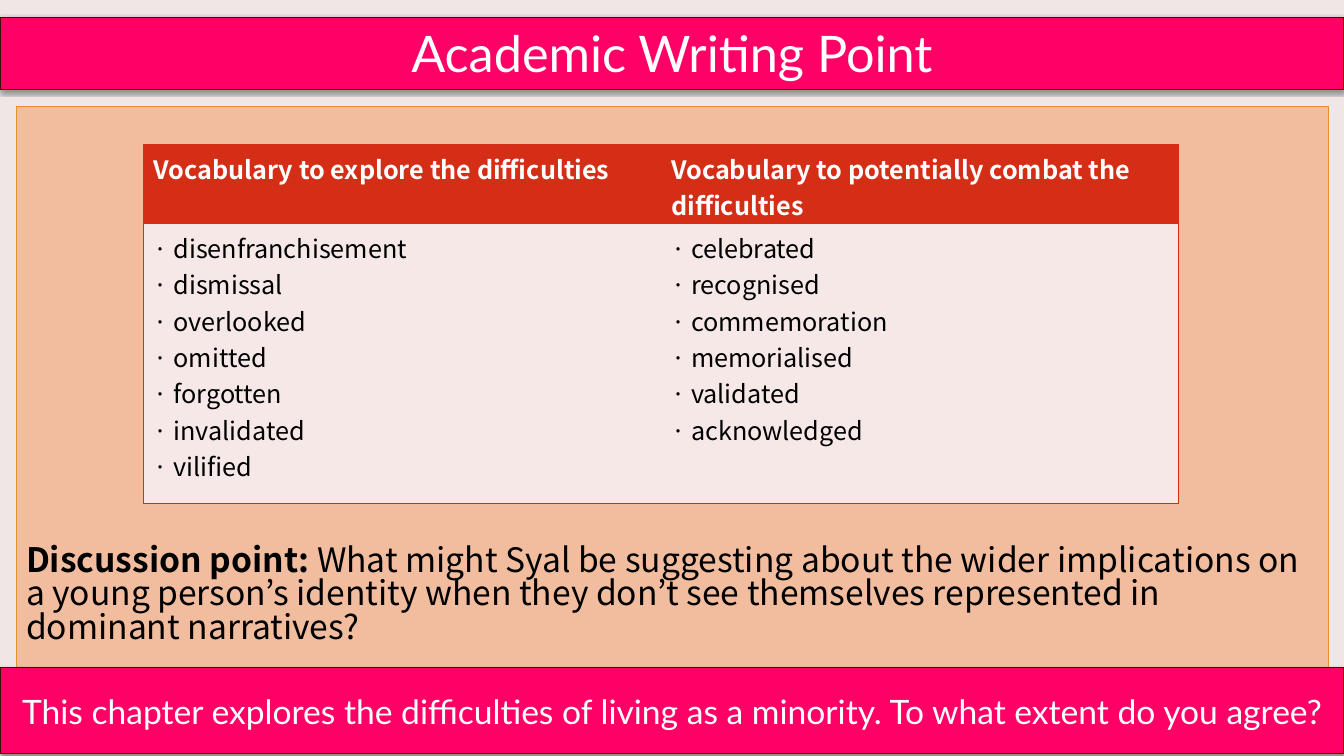
from dataclasses import dataclass

import pptx
import pptx.dml.color
import pptx.enum.shapes
import pptx.enum.text
import pptx.oxml
import pptx.oxml.ns
import pptx.util

Pt = pptx.util.Pt
ALIGN = pptx.enum.text.PP_ALIGN
ANCHOR = pptx.enum.text.MSO_ANCHOR


@dataclass(frozen=True)
class Theme:
    background: str = "F0E6E5"
    banner: str = "FF0066"
    banner_edge: str = "3C1301"
    panel: str = "F1BD9E"
    panel_edge: str = "E78F29"
    table_red: str = "D52E17"
    table_body: str = "F7E8E8"
    light: str = "FFFFFF"
    dark: str = "000000"
    banner_font: str = "Lato"
    body_font: str = "Noto Sans CJK JP"
    title_size: float = 36
    discussion_size: float = 24
    table_size: float = 18


@dataclass(frozen=True)
class Box:
    left: float
    top: float
    width: float
    height: float
    fill: str
    edge: str
    shadow: bool = False


@dataclass(frozen=True)
class Vocabulary:
    heading: str
    words: tuple[str, ...]


THEME = Theme()
SLIDE_WIDTH, SLIDE_HEIGHT = 960, 540
TITLE = Box(0, 12.24, SLIDE_WIDTH, 51.84, THEME.banner, THEME.banner_edge, True)
PANEL = Box(11.5, 76.3, 937.4, 411.1, THEME.panel, THEME.panel_edge)
QUESTION = Box(0, 476.64, SLIDE_WIDTH, 61.92, THEME.banner, THEME.banner_edge, True)
TABLE_LEFT, TABLE_TOP = 102.6, 103.5
COLUMN_WIDTH = 369.7
ROW_HEIGHTS = (56.4, 200)
VOCABULARIES = (
    Vocabulary(
        "Vocabulary to explore the difficulties",
        ("disenfranchisement", "dismissal", "overlooked", "omitted",
         "forgotten", "invalidated", "vilified"),
    ),
    Vocabulary(
        "Vocabulary to potentially combat the difficulties",
        ("celebrated", "recognised", "commemoration", "memorialised",
         "validated", "acknowledged"),
    ),
)


def rgb(colour: str) -> pptx.dml.color.RGBColor:
    return pptx.dml.color.RGBColor.from_string(colour)


def add_text(paragraph, text: str, *, font: str, size: float, colour: str,
             bold: bool = False) -> None:
    run = paragraph.add_run()
    run.text = text
    run.font.name = font
    run.font.size = Pt(size)
    run.font.bold = bold
    run.font.color.rgb = rgb(colour)


def add_shadow(shape) -> None:
    effects = shape.element.spPr.find(pptx.oxml.ns.qn("a:effectLst"))
    effects.append(pptx.oxml.parse_xml(
        f'<a:outerShdw {pptx.oxml.ns.nsdecls("a")} blurRad="{Pt(3.1)}" '
        f'dist="{Pt(1.6)}" dir="5400000" rotWithShape="0">'
        f'<a:srgbClr val="{THEME.dark}"><a:alpha val="38000"/></a:srgbClr>'
        "</a:outerShdw>"))


def add_box(slide, box: Box, anchor):
    shape = slide.shapes.add_shape(
        pptx.enum.shapes.MSO_SHAPE.RECTANGLE,
        Pt(box.left), Pt(box.top), Pt(box.width), Pt(box.height))
    shape.fill.solid()
    shape.fill.fore_color.rgb = rgb(box.fill)
    shape.line.color.rgb = rgb(box.edge)
    shape.line.width = Pt(0.75)
    shape.shadow.inherit = False
    if box.shadow:
        add_shadow(shape)
    shape.text_frame.word_wrap = True
    shape.text_frame.vertical_anchor = anchor
    return shape


def add_banner(slide, box: Box, text: str, size: float, anchor) -> None:
    paragraph = add_box(slide, box, anchor).text_frame.paragraphs[0]
    paragraph.alignment = ALIGN.CENTER
    add_text(paragraph, text, font=THEME.banner_font, size=size, colour=THEME.light)


def add_discussion(slide) -> None:
    frame = add_box(slide, PANEL, ANCHOR.BOTTOM).text_frame
    frame.margin_bottom = Pt(26)
    paragraph = frame.paragraphs[0]
    paragraph.alignment = ALIGN.LEFT
    paragraph.line_spacing = 0.83
    parts = (
        ("Discussion point: ", True),
        ("What might Syal be suggesting about the wider implications on a young "
         "person’s identity when they don’t see themselves represented in "
         "dominant narratives?", False),
    )
    for text, bold in parts:
        add_text(paragraph, text, font=THEME.body_font,
                 size=THEME.discussion_size, colour=THEME.dark, bold=bold)


def set_borders(cell, outer_side: str) -> None:
    properties = cell._tc.get_or_add_tcPr()
    for position, side in enumerate(("L", "R", "T", "B")):
        visible = side in (outer_side, "T", "B")
        paint = (f'<a:solidFill><a:srgbClr val="{THEME.table_red}"/></a:solidFill>'
                 if visible else "<a:noFill/>")
        properties.insert(position, pptx.oxml.parse_xml(
            f'<a:ln{side} {pptx.oxml.ns.nsdecls("a")} w="{Pt(1)}">{paint}</a:ln{side}>'))


def fill_cell(cell, lines: tuple[str, ...], *, fill: str, colour: str,
              bold: bool, outer_side: str) -> None:
    cell.fill.solid()
    cell.fill.fore_color.rgb = rgb(fill)
    set_borders(cell, outer_side)
    frame = cell.text_frame
    for index, line in enumerate(lines):
        paragraph = frame.add_paragraph() if index else frame.paragraphs[0]
        add_text(paragraph, line, font=THEME.body_font,
                 size=THEME.table_size, colour=colour, bold=bold)


def add_vocabulary_table(slide) -> None:
    table = slide.shapes.add_table(
        len(ROW_HEIGHTS), len(VOCABULARIES), Pt(TABLE_LEFT), Pt(TABLE_TOP),
        Pt(COLUMN_WIDTH * len(VOCABULARIES)), Pt(sum(ROW_HEIGHTS))).table
    for row, height in zip(table.rows, ROW_HEIGHTS):
        row.height = Pt(height)
    for column, (vocabulary, side) in enumerate(zip(VOCABULARIES, ("L", "R"))):
        table.columns[column].width = Pt(COLUMN_WIDTH)
        heading = table.cell(0, column)
        heading.margin_bottom = Pt(0)
        fill_cell(heading, (vocabulary.heading,), fill=THEME.table_red,
                  colour=THEME.light, bold=True, outer_side=side)
        fill_cell(table.cell(1, column),
                  tuple(f"· {word}" for word in vocabulary.words),
                  fill=THEME.table_body, colour=THEME.dark, bold=False,
                  outer_side=side)


def main() -> None:
    deck = pptx.Presentation()
    deck.slide_width, deck.slide_height = Pt(SLIDE_WIDTH), Pt(SLIDE_HEIGHT)
    slide = deck.slides.add_slide(deck.slide_layouts[6])
    slide.background.fill.solid()
    slide.background.fill.fore_color.rgb = rgb(THEME.background)
    add_banner(slide, TITLE, "Academic Writing Point", THEME.title_size, ANCHOR.TOP)
    add_discussion(slide)
    add_banner(slide, QUESTION,
               "This chapter explores the difficulties of living as a minority. "
               "To what extent do you agree?", THEME.discussion_size, ANCHOR.MIDDLE)
    add_vocabulary_table(slide)
    deck.save("out.pptx")


if __name__ == "__main__":
    main()
